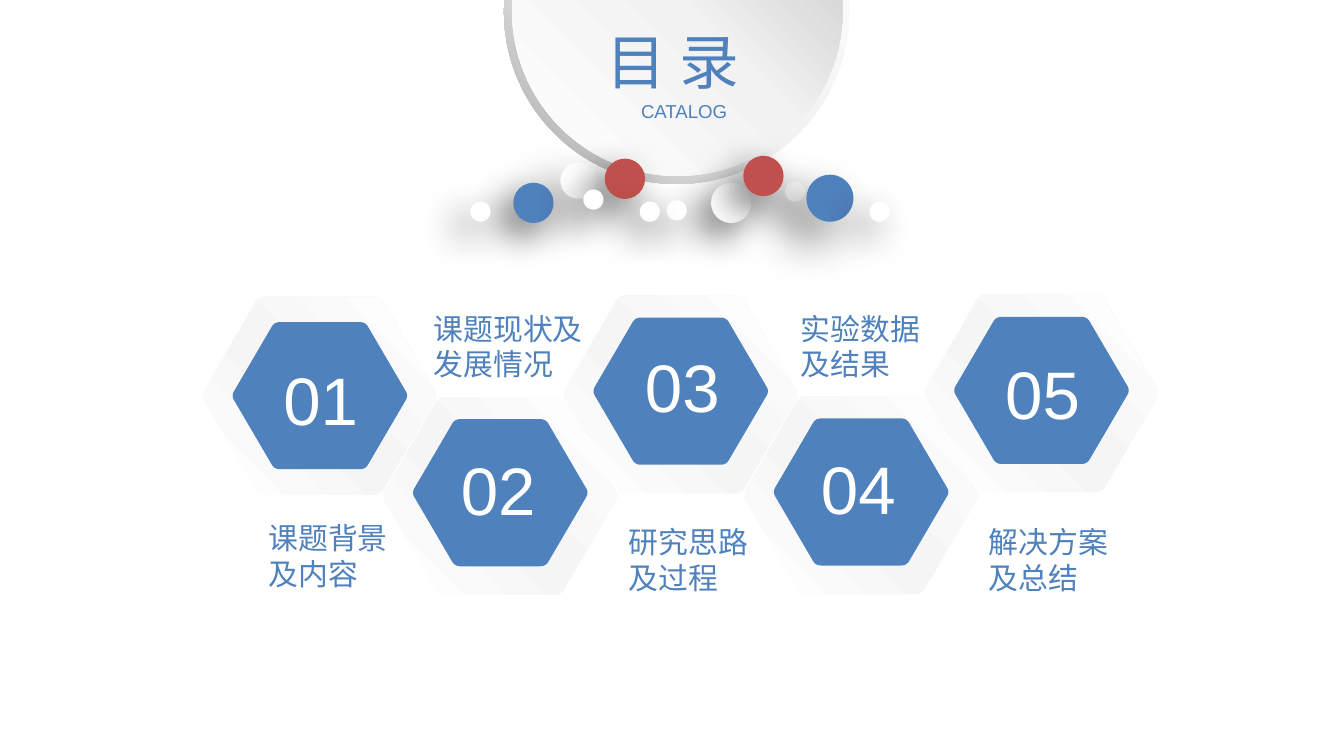
from copy import deepcopy
from lxml import etree
from pptx import Presentation
from pptx.dml.color import RGBColor
from pptx.enum.shapes import MSO_SHAPE
from pptx.enum.text import MSO_ANCHOR, MSO_AUTO_SIZE, PP_ALIGN
from pptx.oxml.ns import qn
from pptx.util import Pt

OVAL, DONUT = MSO_SHAPE.OVAL, MSO_SHAPE.DONUT
LEFT, CENTER = PP_ALIGN.LEFT, PP_ALIGN.CENTER
TOP, MIDDLE = MSO_ANCHOR.TOP, MSO_ANCHOR.MIDDLE
GROW = MSO_AUTO_SIZE.SHAPE_TO_FIT_TEXT

WHITE = RGBColor(0xFF, 0xFF, 0xFF)
PALE = RGBColor(0xF5, 0xF5, 0xF5)
LIGHT = RGBColor(0xF2, 0xF2, 0xF2)
SILVER = RGBColor(0xBF, 0xBF, 0xBF)
GRAY = RGBColor(0xA6, 0xA6, 0xA6)
BLUE = RGBColor(0x4F, 0x81, 0xBD)
RED = RGBColor(0xC0, 0x50, 0x4D)
LATIN, CJK = "Arial", "Noto Sans CJK SC"

# Gradient stops (position, colour)
RIM = [(0, WHITE), (0.55, LIGHT), (1, GRAY)]
DISC = [(0, WHITE), (0.51, LIGHT), (1, SILVER)]
SHEEN = [(0, WHITE), (0.47, PALE), (1, WHITE)]

# Shadow (opacity %, blur, distance)
NEAR, FAR = (60, 20, 10), (50, 25, 15)

# left, top, diameter, colour, shadow
BALLS = [
    (380.9, 97.9, 21.6, WHITE, NEAR),
    (357.1, 107.3, 10.8, WHITE, NEAR),
    (420.5, 97.2, 10.8, WHITE, NEAR),
    (300.2, 87.1, 19.4, WHITE, FAR),
    (324, 85, 21.6, RED, NEAR),
    (342.7, 108, 10.8, WHITE, NEAR),
    (432, 93.6, 25.2, BLUE, FAR),
    (275, 97.9, 21.6, BLUE, NEAR),
    (252, 108, 10.8, WHITE, NEAR),
    (398.2, 83.5, 21.6, RED, NEAR),
    (312.5, 101.5, 10.8, WHITE, NEAR),
    (465.8, 108, 10.8, WHITE, NEAR),
]

# number, ring centre y, core centre y, number box, label, label box
CHAPTERS = [
    ("01", 212, 212, (144.7, 188.6, 63.4, 51), "课题背景及内容", (136.8, 275, 80.6, 46)),
    ("02", 265.7, 264, (239.8, 236.9, 61.9, 51), "课题现状及发展情况", (225.4, 162.7, 95.8, 46)),
    ("03", 211.3, 209.6, (338.4, 181.4, 61.2, 51), "研究思路及过程", (329.8, 277.2, 80.6, 46)),
    ("04", 265.3, 263.6, (432.7, 236.2, 69.8, 51), "实验数据及结果", (421.9, 162.7, 80.6, 46)),
    ("05", 210.6, 209.2, (531.4, 185, 66.2, 51), "解决方案及总结", (522.7, 277.2, 80.6, 46)),
]
STACK = [4, 2, 0, 1, 3]  # back to front
FIRST_X, STEP_X = 171.2, 96.65
RING, FACE, CORE = (126, 107.2), (125, 106), (93.6, 78.8)


def paint(shape, color):
    shape.shadow.inherit = False
    shape.fill.solid()
    shape.fill.fore_color.rgb = color
    shape.line.fill.background()


def paint_gradient(shape, stops, angle):
    """Three-stop linear gradient; angle is counter-clockwise in degrees."""
    paint(shape, WHITE)
    shape.fill.gradient()
    shape.fill.gradient_angle = angle
    last = shape._element.spPr.findall(".//" + qn("a:gs"))[-1]
    last.addnext(deepcopy(last))
    for stop, (position, color) in zip(shape.fill.gradient_stops, stops):
        stop.position = position
        stop.color.rgb = color


def cast_shadow(shape, opacity, blur, distance):
    effects = shape._element.spPr.find(qn("a:effectLst"))
    shadow = etree.SubElement(effects, qn("a:outerShdw"), blurRad=str(Pt(blur)),
                              dist=str(Pt(distance)), dir=str(135 * 60000),
                              algn="tr", rotWithShape="0")
    black = etree.SubElement(shadow, qn("a:srgbClr"), val="000000")
    etree.SubElement(black, qn("a:alpha"), val=str(opacity * 1000))


def add_hexagon(shapes, cx, cy, size):
    """Hexagon with rounded corners, centred on (cx, cy)."""
    half_w, half_h = size[0] / 2, size[1] / 2
    tip, shoulder = 1.013 * half_w, 0.52 * half_w
    corners = [(tip, 0), (shoulder, half_h), (-shoulder, half_h),
               (-tip, 0), (-shoulder, -half_h), (shoulder, -half_h)]
    cut, steps = 0.06, 6
    outline = []
    for i, (x, y) in enumerate(corners):
        (px, py), (nx, ny) = corners[i - 1], corners[(i + 1) % 6]
        for step in range(steps + 1):
            t = step / steps
            before, after = cut * (1 - t) ** 2, cut * t ** 2
            outline.append((Pt(cx + x + before * (px - x) + after * (nx - x)),
                            Pt(cy + y + before * (py - y) + after * (ny - y))))
    builder = shapes.build_freeform(*outline[0])
    builder.add_line_segments(outline[1:], close=True)
    return builder.convert_to_shape()


def write(box, text, size, color, font=LATIN, align=LEFT, anchor=TOP, fit=GROW):
    frame = box.text_frame
    frame.text = text
    frame.word_wrap = True
    frame.auto_size = fit
    frame.vertical_anchor = anchor
    paragraph = frame.paragraphs[0]
    paragraph.alignment = align
    run = paragraph.runs[0]
    run.font.size = Pt(size)
    run.font.name = font
    run.font.color.rgb = color
    etree.SubElement(run.font._element, qn("a:ea"), typeface=font)


def add_text(shapes, place, *args, **style):
    box = shapes.add_textbox(*map(Pt, place))
    write(box, *args, **style)
    return box


def main():
    prs = Presentation()
    prs.slide_width, prs.slide_height = Pt(720), Pt(405)
    slide = prs.slides.add_slide(prs.slide_layouts[5])
    shapes = slide.shapes

    rim = shapes.add_shape(DONUT, Pt(270), Pt(-86.4), Pt(185), Pt(185))
    rim.adjustments[0] = 0.049
    paint_gradient(rim, RIM, 225)
    disc = shapes.add_shape(OVAL, Pt(274.3), Pt(-82.8), Pt(177.1), Pt(177.1))
    paint_gradient(disc, DISC, 45)

    for left, top, diameter, color, shadow in BALLS:
        ball = shapes.add_shape(OVAL, Pt(left), Pt(top), Pt(diameter), Pt(diameter))
        paint(ball, color)
        cast_shadow(ball, *shadow)

    title = shapes.title
    title.left, title.top, title.width, title.height = map(Pt, (317.5, 9.4, 97.2, 46))
    write(title, "目 录", 32, BLUE, font=CJK)
    disc._element.addnext(title._element)  # lift the title above the disc

    add_text(shapes, (312.5, 44.6, 108, 30.2), "CATALOG", 10, BLUE,
             align=CENTER, anchor=MIDDLE, fit=MSO_AUTO_SIZE.NONE)

    for index in STACK:
        number, ring_y, core_y, number_box, _, _ = CHAPTERS[index]
        x = FIRST_X + index * STEP_X
        paint(add_hexagon(shapes, x, ring_y, RING), WHITE)
        paint_gradient(add_hexagon(shapes, x, ring_y, FACE), SHEEN, 45)
        paint(add_hexagon(shapes, x + 0.2, core_y, CORE), BLUE)
        add_text(shapes, number_box, number, 36, WHITE)

    for *_, label, label_box in CHAPTERS:
        add_text(shapes, label_box, label, 16, BLUE)

    prs.save("out.pptx")


if __name__ == "__main__":
    main()
